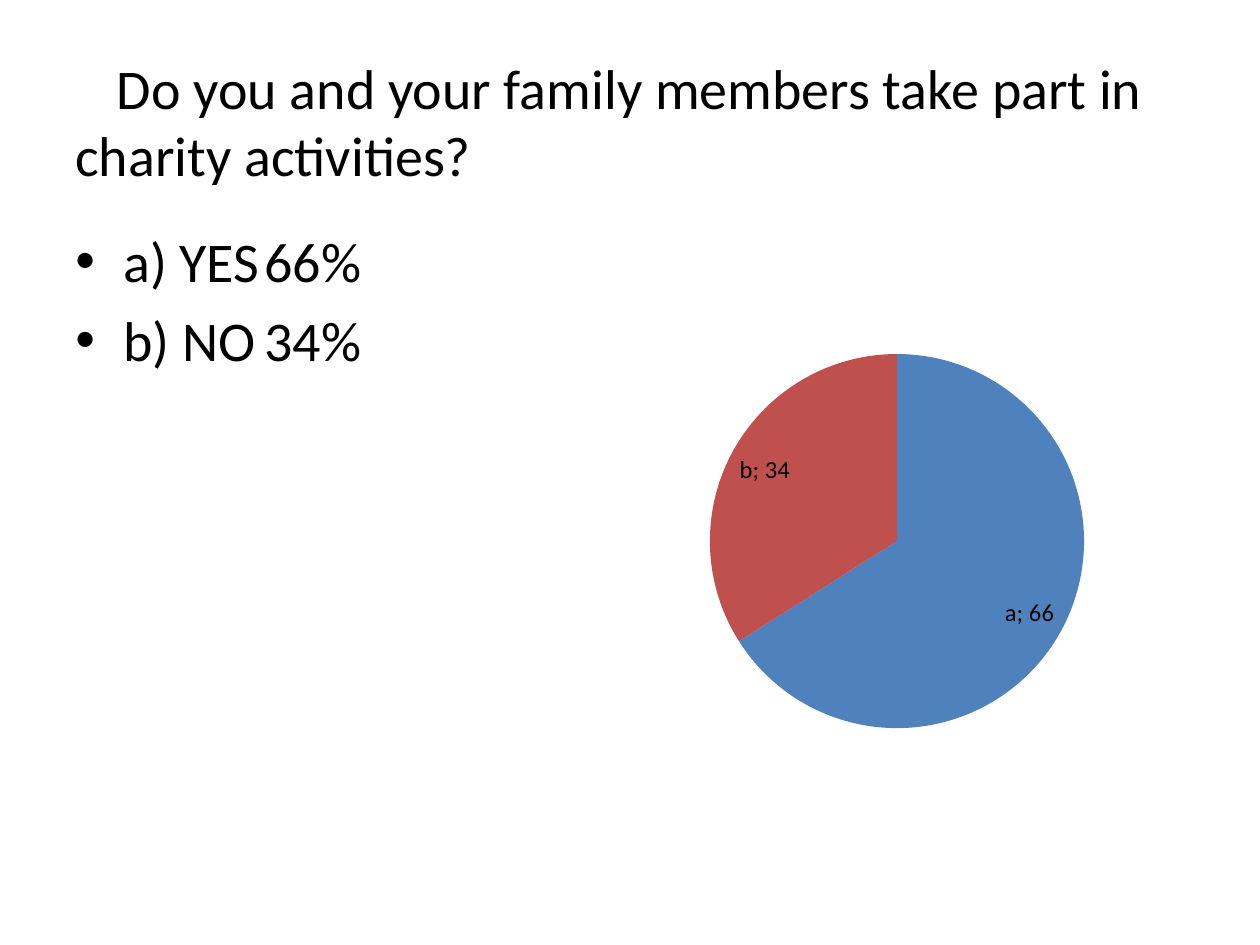
from lxml.etree import SubElement
from pptx import Presentation
from pptx.chart.data import CategoryChartData
from pptx.dml.color import RGBColor
from pptx.enum.chart import XL_CHART_TYPE, XL_LABEL_POSITION
from pptx.enum.text import MSO_ANCHOR, PP_ALIGN
from pptx.oxml import parse_xml
from pptx.oxml.ns import nsdecls, qn
from pptx.util import Inches, Pt

BLACK = RGBColor(0x00, 0x00, 0x00)
YES_BLUE = RGBColor(0x4F, 0x81, 0xBD)
NO_RED = RGBColor(0xC0, 0x50, 0x4D)
FONT = "Calibri"


def style_font(font, size):
    font.name = FONT
    font.size = Pt(size)
    font.color.rgb = BLACK


def add_text(slide, box, lines, anchor, first_indent, left_margin=0):
    frame = slide.shapes.add_textbox(*box).text_frame
    frame.word_wrap = True
    frame.vertical_anchor = anchor
    frame.text = "\n".join(lines)
    for paragraph in frame.paragraphs:
        paragraph.alignment = PP_ALIGN.LEFT
        properties = paragraph._p.get_or_add_pPr()
        properties.set("marL", str(Inches(left_margin)))
        properties.set("indent", str(Inches(first_indent)))
        for run in paragraph.runs:
            style_font(run.font, 32)
    return frame


def add_question(slide, box):
    question = "Do you and your family members take part in charity activities?"
    add_text(slide, box, [question], MSO_ANCHOR.MIDDLE, 0.33)


def add_answers(slide, box):
    answers = add_text(slide, box, ["a) YES\t66%", "b) NO\t34%"],
                       MSO_ANCHOR.TOP, -0.38, 0.38)
    for answer in answers.paragraphs:
        answer.space_before = Pt(6.4)
        properties = answer._p.get_or_add_pPr()
        SubElement(properties, qn("a:buFont"), typeface="Arial")
        SubElement(properties, qn("a:buChar"), char="•")


def set_plot_layout(chart, x, y, width, height):
    plot_area = chart._chartSpace.chart.plotArea
    for layout in plot_area.findall(qn("c:layout")):
        plot_area.remove(layout)
    plot_area.insert(0, parse_xml(
        f'<c:layout {nsdecls("c")}><c:manualLayout>'
        '<c:layoutTarget val="inner"/><c:xMode val="edge"/><c:yMode val="edge"/>'
        f'<c:x val="{x}"/><c:y val="{y}"/><c:w val="{width}"/><c:h val="{height}"/>'
        '</c:manualLayout></c:layout>'))


def add_answer_pie(slide, box):
    shares = CategoryChartData()
    shares.categories = ["a", "b"]
    shares.add_series("Series 1", (66, 34))
    chart = slide.shapes.add_chart(XL_CHART_TYPE.PIE, *box, shares).chart
    chart.has_legend = False
    chart.has_title = False
    style_font(chart.font, 10)
    set_plot_layout(chart, 0.19, 0, 0.79, 0.99)

    plot = chart.plots[0]
    plot.vary_by_categories = True
    for index, color in enumerate((YES_BLUE, NO_RED)):
        fill = plot.series[0].points[index].format.fill
        fill.solid()
        fill.fore_color.rgb = color

    plot.has_data_labels = True
    labels = plot.data_labels
    style_font(labels.font, 14)
    labels.number_format = "0"
    labels.number_format_is_linked = False
    labels.position = XL_LABEL_POSITION.INSIDE_END
    labels.show_value = True
    labels.show_category_name = True
    labels.show_percentage = False
    show_bubble_size = labels._element.find(qn("c:showBubbleSize"))
    show_bubble_size.addnext(parse_xml(f'<c:separator {nsdecls("c")}>; </c:separator>'))


def main():
    presentation = Presentation()
    presentation.slide_width = Inches(10)
    presentation.slide_height = Inches(7.5)
    slide = presentation.slides.add_slide(presentation.slide_layouts[6])
    add_question(slide, (Inches(0.5), Inches(0.33), Inches(9), Inches(1.25)))
    add_answers(slide, (Inches(0.5), Inches(1.75), Inches(9), Inches(4.95)))
    add_answer_pie(slide, (Inches(4.92), Inches(2.81), Inches(3.76), Inches(3)))
    presentation.save("out.pptx")


if __name__ == "__main__":
    main()
